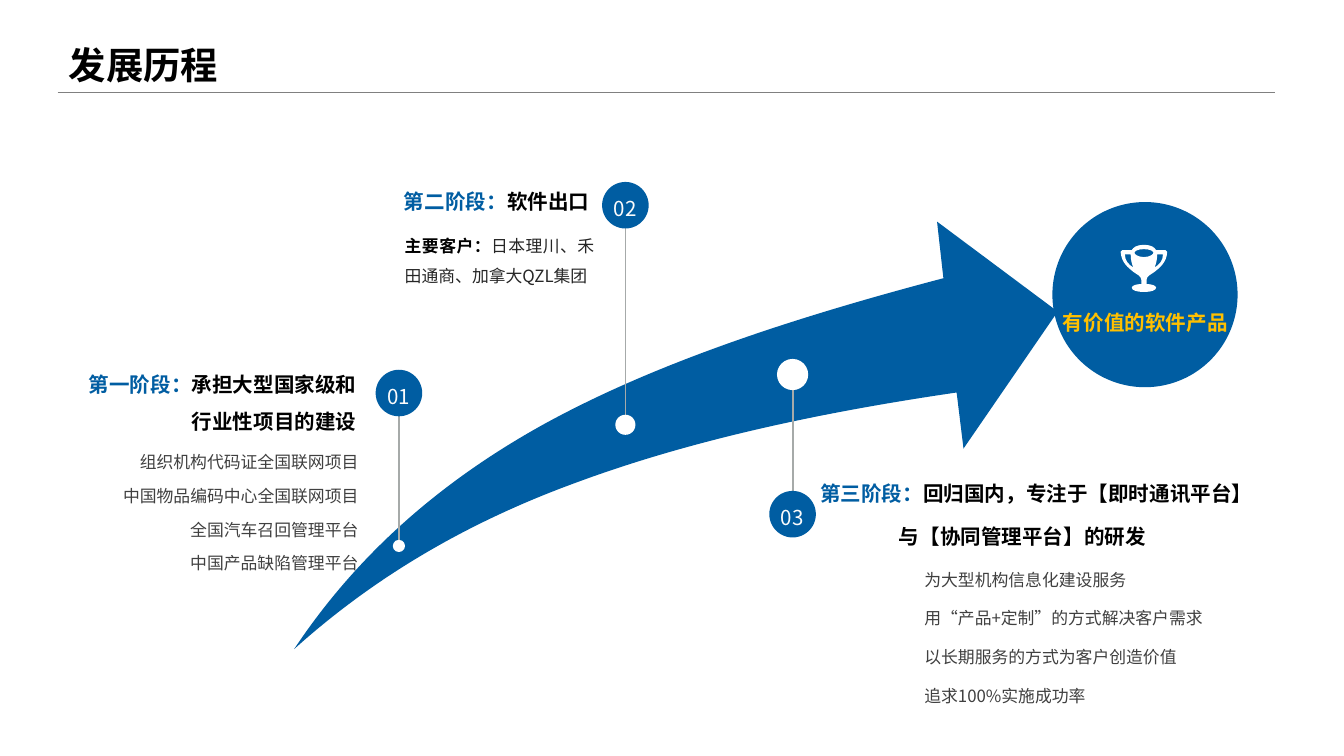
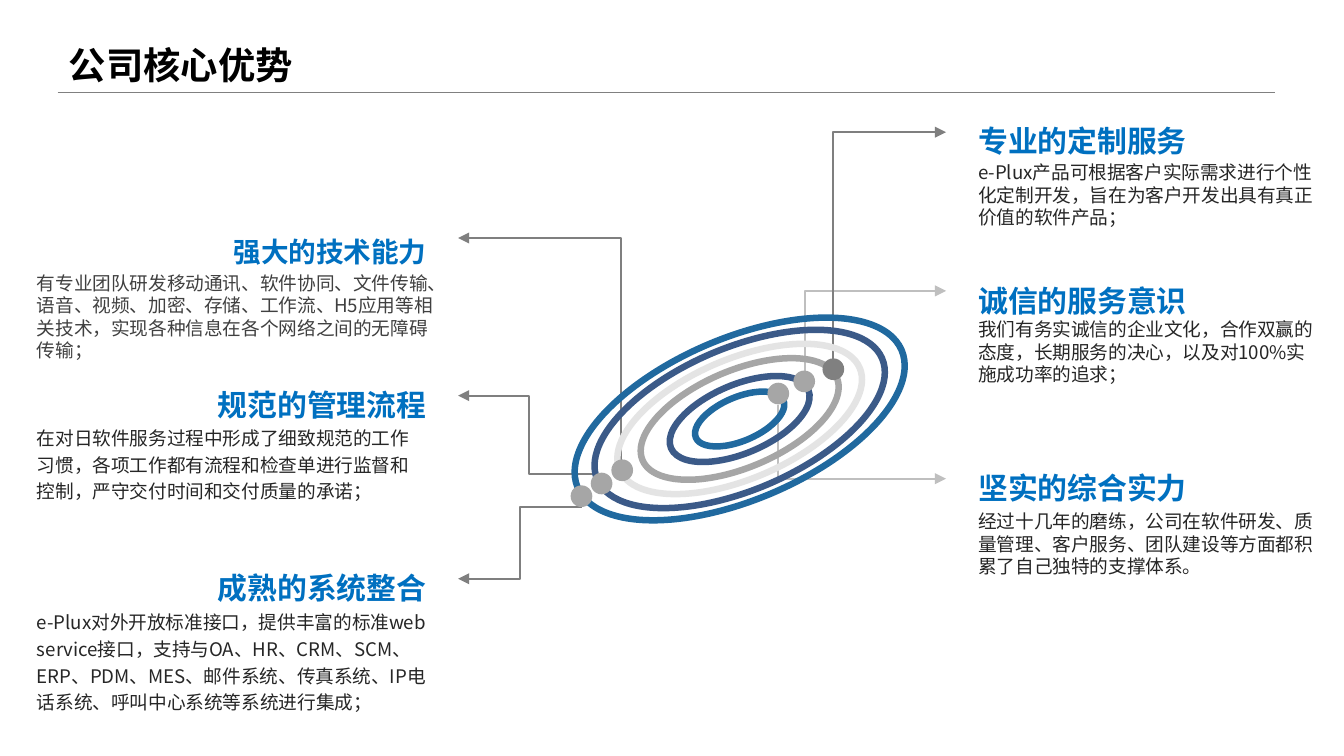
from lxml import etree
from pptx import Presentation
from pptx import util as u
from pptx.dml.color import RGBColor
from pptx.enum import shapes, text
from pptx.oxml.ns import qn

Cm, Pt = u.Cm, u.Pt
FONT = "Noto Sans CJK SC"
BLUE = RGBColor(0x00, 0x5D, 0xA2)
HEADING_BLUE = RGBColor(0x00, 0x70, 0xC0)
RING_BLUE = RGBColor(0x20, 0x69, 0x9F)
RING_NAVY = RGBColor(0x3B, 0x5A, 0x88)
RING_PALE = RGBColor(0xE4, 0xE4, 0xE4)
GOLD = RGBColor(0xFF, 0xC0, 0x00)
BLACK = RGBColor(0x00, 0x00, 0x00)
WHITE = RGBColor(0xFF, 0xFF, 0xFF)
NEAR_WHITE = RGBColor(0xFC, 0xFC, 0xFC)
INK = RGBColor(0x26, 0x26, 0x26)
CHARCOAL = RGBColor(0x40, 0x40, 0x40)
GRAY = RGBColor(0x80, 0x80, 0x80)
DARK_GRAY = RGBColor(0x7F, 0x7F, 0x7F)
MID_GRAY = RGBColor(0xA6, 0xA6, 0xA6)
PIN_GRAY = RGBColor(0xA6, 0xAA, 0xA9)
SILVER = RGBColor(0xBF, 0xBF, 0xBF)

LEFT, RIGHT = text.PP_ALIGN.LEFT, text.PP_ALIGN.RIGHT
CENTER, JUSTIFY = text.PP_ALIGN.CENTER, text.PP_ALIGN.JUSTIFY
TOP, MIDDLE = text.MSO_ANCHOR.TOP, text.MSO_ANCHOR.MIDDLE


def pairs(segment):
    return list(zip(segment[::2], segment[1::2]))


def mirror(segments):
    """Run the segments backwards, reflected about x = 0."""
    result = [(-segments[-1][-2], segments[-1][-1])]
    for previous, segment in reversed(list(zip(segments, segments[1:]))):
        points = [previous[-2:]] + pairs(segment)[:-1]
        order = points[:0:-1] + points[:1]
        result.append(tuple(value for x, y in order for value in (-x, y)))
    return result


def symmetric(half):
    return half + mirror(half)[1:]


class Deck:
    def __init__(self):
        self.presentation = Presentation()
        self.presentation.slide_width = Cm(25.4)
        self.presentation.slide_height = Cm(14.29)
        self.slide = None

    def add_slide(self, title):
        self.slide = self.presentation.slides.add_slide(self.presentation.slide_layouts[6])
        self.text((1.3, 0.7, 8.1, 1.04), [[(title, BLACK, True)]], 20,
                  anchor=MIDDLE, inset=(0, 0.13, 0, 0.13))
        self.line((1.09, 1.75), (24.1, 1.75), GRAY, 0.75)

    def text(self, box, paragraphs, size, align=LEFT, anchor=TOP, spacing=None,
             before=0, inset=(0, 0, 0, 0), indents=()):
        shape = self.slide.shapes.add_textbox(*map(Cm, box))
        frame = shape.text_frame
        frame.word_wrap = True
        frame.vertical_anchor = anchor
        (frame.margin_left, frame.margin_top,
         frame.margin_right, frame.margin_bottom) = map(Cm, inset)
        for index, runs in enumerate(paragraphs):
            paragraph = frame.paragraphs[0] if index == 0 else frame.add_paragraph()
            paragraph.alignment = align
            paragraph.line_spacing = spacing
            if index:
                paragraph.space_before = Pt(before)
            if index < len(indents):
                paragraph._p.get_or_add_pPr().set("marL", str(Cm(indents[index])))
            for words, color, bold in runs:
                run = paragraph.add_run()
                run.text = words
                run.font.size = Pt(size)
                run.font.name = FONT
                run.font.bold = bold
                run.font.color.rgb = color
                east_asian = etree.SubElement(run._r.get_or_add_rPr(), qn("a:ea"))
                east_asian.set("typeface", FONT)

    def paint(self, shape, fill):
        shape.shadow.inherit = False
        shape.fill.solid()
        shape.fill.fore_color.rgb = fill
        shape.line.fill.background()

    def oval(self, x, y, width, height):
        return self.slide.shapes.add_shape(
            shapes.MSO_SHAPE.OVAL, Cm(x - width / 2), Cm(y - height / 2), Cm(width), Cm(height))

    def dot(self, x, y, diameter, fill):
        self.paint(self.oval(x, y, diameter, diameter), fill)

    def ring(self, x, y, width, height, tilt, color):
        shape = self.oval(x, y, width, height)
        shape.rotation = tilt
        shape.shadow.inherit = False
        shape.fill.background()
        shape.line.color.rgb = color
        shape.line.width = Pt(3.5)

    def outline(self, contours, fill, origin=(0, 0)):
        """Draw contours of points (two numbers) and cubic curves (six numbers)."""
        def place(segment):
            return [(Cm(origin[0] + x), Cm(origin[1] + y)) for x, y in pairs(segment)]

        builder = self.slide.shapes.build_freeform(*place(contours[0][0])[0])
        for index, contour in enumerate(contours):
            if index:
                builder.move_to(*place(contour[0])[0])
            points = [point for segment in contour[1:] for point in place(segment)]
            builder.add_line_segments(points, close=False)
        shape = builder.convert_to_shape()
        self.paint(shape, fill)

        # Join each run of three control points into one curve
        steps = iter(list(shape._element.iter(qn("a:lnTo"))))
        for contour in contours:
            for segment in contour[1:]:
                step = next(steps)
                if len(segment) == 6:
                    curve = etree.Element(qn("a:cubicBezTo"))
                    step.addprevious(curve)
                    for part in (step, next(steps), next(steps)):
                        curve.append(part[0])
                        part.getparent().remove(part)
                    step = curve
            step.addnext(etree.Element(qn("a:close")))

    def line(self, start, end, color, width=1, bend=None):
        """Draw a line; a bend (share of the width) makes it an elbow arrow."""
        kind = shapes.MSO_CONNECTOR.STRAIGHT if bend is None else shapes.MSO_CONNECTOR.ELBOW
        connector = self.slide.shapes.add_connector(kind, *map(Cm, start + end))
        connector.line.color.rgb = color
        connector.line.width = Pt(width)
        properties = connector._element.spPr
        if bend is not None:
            guides = properties.find(qn("a:prstGeom")).get_or_add_avLst()
            etree.SubElement(guides, qn("a:gd"), name="adj1", fmla=f"val {int(bend * 100000)}")
            etree.SubElement(connector.line._get_or_add_ln(), qn("a:tailEnd"), type="triangle")
        etree.SubElement(properties, qn("a:effectLst"))


def build_history(deck):
    deck.add_slide("发展历程")

    # Rising arrow
    arrow = [(5.56, 12.27), (6.71, 10.54, 8.26, 9.14, 10.26, 8.03),
             (12.29, 6.91, 14.83, 6.05, 17.83, 5.26),
             (17.71, 4.19), (19.99, 5.89), (18.21, 8.48), (18.08, 7.42),
             (15.34, 7.82, 12.95, 8.36, 10.9, 9.12),
             (8.81, 9.88, 7.06, 10.92, 5.56, 12.27)]
    deck.outline([arrow], BLUE)

    # Stage pins: number, x, badge y, dot y, dot diameter
    for number, x, badge_y, dot_y, diameter in (
            ("01", 7.54, 7.43, 10.32, 0.23),
            ("02", 11.82, 3.88, 8.03, 0.38),
            ("03", 14.98, 9.72, 7.08, 0.59)):
        deck.line((x, dot_y), (x, badge_y), PIN_GRAY)
        deck.dot(x, badge_y, 0.88, BLUE)
        deck.dot(x, dot_y, diameter, WHITE)
        deck.text((x - 0.27, badge_y - 0.27, 0.53, 0.64), [[(number, NEAR_WHITE, False)]],
                  11, CENTER, MIDDLE, Pt(14))

    # First stage
    margins = (0.25, 0.13, 0.25, 0.13)
    deck.text((1.25, 7.06, 5.74, 0.86),
              [[("第一阶段：", BLUE, True), ("承担大型国家级和行业性项目的建设", BLACK, True)]],
              11, RIGHT, MIDDLE, 1.5, inset=margins)
    projects = ("组织机构代码证全国联网项目", "中国物品编码中心全国联网项目",
                "全国汽车召回管理平台", "中国产品缺陷管理平台")
    deck.text((2.07, 8.22, 4.95, 1.3), [[(project, CHARCOAL, False)] for project in projects],
              9, RIGHT, TOP, 1.5, 1.8, margins)

    # Second stage
    deck.text((6.45, 3.4, 4.69, 0.86),
              [[("第二阶段：", BLUE, True), ("软件出口", BLACK, True)]],
              11, RIGHT, MIDDLE, 0.9)
    deck.text((7.65, 4.26, 3.58, 1.09),
              [[("主要客户：", BLACK, True), ("日本理川、禾田通商、加拿大QZL集团", INK, False)]],
              9, JUSTIFY, TOP, 1.5)

    # Third stage
    deck.text((15.5, 9.26, 11, 0.94),
              [[("第三阶段：", BLUE, True), ("回归国内，专注于【即时通讯平台】", BLACK, True)],
               [("与【协同管理平台】的研发", BLACK, True)]],
              11, anchor=MIDDLE, before=10, indents=(0, 1.49))
    promises = ("为大型机构信息化建设服务", "用“产品+定制”的方式解决客户需求",
                "以长期服务的方式为客户创造价值", "追求100%实施成功率")
    deck.text((17.47, 10.76, 8, 1.3), [[(promise, CHARCOAL, False)] for promise in promises],
              9, before=10)

    # Goal with trophy
    deck.dot(21.64, 5.57, 3.5, BLUE)
    half_cup = [(0, 0), (0.15, 0, 0.2, 0.05, 0.23, 0.1), (0.41, 0.1),
                (0.43, 0.1, 0.44, 0.11, 0.44, 0.13), (0.43, 0.33, 0.3, 0.43, 0.2, 0.51),
                (0.13, 0.56, 0.05, 0.59, 0.05, 0.66), (0.05, 0.74),
                (0.15, 0.74, 0.23, 0.77, 0.23, 0.81), (0.23, 0.86, 0.13, 0.89, 0, 0.89)]
    half_rim = [(0, 0.08), (0.12, 0.08, 0.18, 0.12, 0.18, 0.15),
                (0.18, 0.17, 0.12, 0.23, 0, 0.23)]
    handle = [(0.25, 0.18), (0.36, 0.18), (0.36, 0.3, 0.29, 0.37, 0.2, 0.43),
              (0.23, 0.36, 0.25, 0.28, 0.25, 0.18)]
    deck.outline([symmetric(half_cup), symmetric(half_rim), handle, mirror(handle)],
                 WHITE, (21.62, 4.63))
    deck.text((20.09, 5.69, 3.2, 0.86), [[("有价值的软件产品", GOLD, True)]],
              11, anchor=MIDDLE, spacing=0.9)


def build_strengths(deck):
    deck.add_slide("公司核心优势")

    # Right side: heading y, body y, heading, body
    for heading_y, body_y, heading, body in (
            (2.14, 3.05, "专业的定制服务",
             "e-Plux产品可根据客户实际需求进行个性化定制开发，旨在为客户开发出具有真正价值的软件产品；"),
            (5.15, 6.01, "诚信的服务意识",
             "我们有务实诚信的企业文化，合作双赢的态度，长期服务的决心，以及对100%实施成功率的追求；"),
            (8.69, 9.64, "坚实的综合实力",
             "经过十几年的磨练，公司在软件研发、质量管理、客户服务、团队建设等方面都积累了自己独特的支撑体系。")):
        inset = (0.61, 0, 0, 0)
        deck.text((17.88, heading_y, 5.66, 0.71), [[(heading, HEADING_BLUE, True)]],
                  16, LEFT, MIDDLE, 1.5, inset=inset)
        deck.text((17.88, body_y, 7.09, 1.27), [[(body, INK, False)]], 10, inset=inset)

    # Left side: heading y, size, body y, width, spacing, colour, heading, body
    for heading_y, size, body_y, width, spacing, color, heading, body in (
            (4.25, 14.8, 5.14, 8.2, 1.0, CHARCOAL, "强大的技术能力",
             "有专业团队研发移动通讯、软件协同、文件传输、语音、视频、加密、存储、工作流、H5应用等相关技术，"
             "实现各种信息在各个网络之间的无障碍传输；"),
            (7.12, 16, 7.98, 7.95, 1.2, INK, "规范的管理流程",
             "在对日软件服务过程中形成了细致规范的工作习惯，各项工作都有流程和检查单进行监督和控制，"
             "严守交付时间和交付质量的承诺；"),
            (10.59, 16, 11.46, 8.02, 1.2, INK, "成熟的系统整合",
             "e-Plux对外开放标准接口，提供丰富的标准web service接口，支持与OA、HR、CRM、SCM、ERP、PDM、"
             "MES、邮件系统、传真系统、IP电话系统、呼叫中心系统等系统进行集成；")):
        inset = (0, 0, 0.61, 0)
        deck.text((2.22, heading_y, 6.45, 0.71), [[(heading, HEADING_BLUE, True)]],
                  size, RIGHT, MIDDLE, 1.5, inset=inset)
        deck.text((0.7, body_y, width, 1.27), [[(body, color, False)]],
                  10, spacing=spacing, inset=inset)

    # Arrows: start, end, bend, colour
    for start, end, bend, color in (
            ((14.71, 7.65), (17.88, 9.05), 0, SILVER),
            ((15.21, 7.01), (17.88, 5.5), 0, SILVER),
            ((15.75, 6.78), (17.88, 2.5), 0, DARK_GRAY),
            ((11, 9.58), (8.66, 10.94), 0.5, DARK_GRAY),
            ((11.33, 8.96), (8.66, 7.48), 0.5, DARK_GRAY),
            ((11.74, 8.69), (8.66, 4.5), 0, DARK_GRAY)):
        deck.line(start, end, color, bend=bend)

    # Tilted concentric rings
    for width, color in ((6.65, RING_BLUE), (5.85, RING_NAVY), (4.93, RING_PALE),
                         (3.99, MID_GRAY), (2.82, RING_NAVY), (1.8, RING_BLUE)):
        deck.ring(13.98, 7.92, width, width * 0.46, -23, color)

    # Dots where the arrows start
    for x, y, color in ((15.2, 7.21, MID_GRAY), (15.75, 6.98, GRAY), (14.71, 7.44, MID_GRAY),
                        (11.37, 9.14, MID_GRAY), (10.99, 9.38, MID_GRAY),
                        (11.76, 8.89, MID_GRAY)):
        deck.dot(x, y, 0.41, color)


def main():
    deck = Deck()
    build_history(deck)
    build_strengths(deck)
    deck.presentation.save("out.pptx")


if __name__ == "__main__":
    main()
